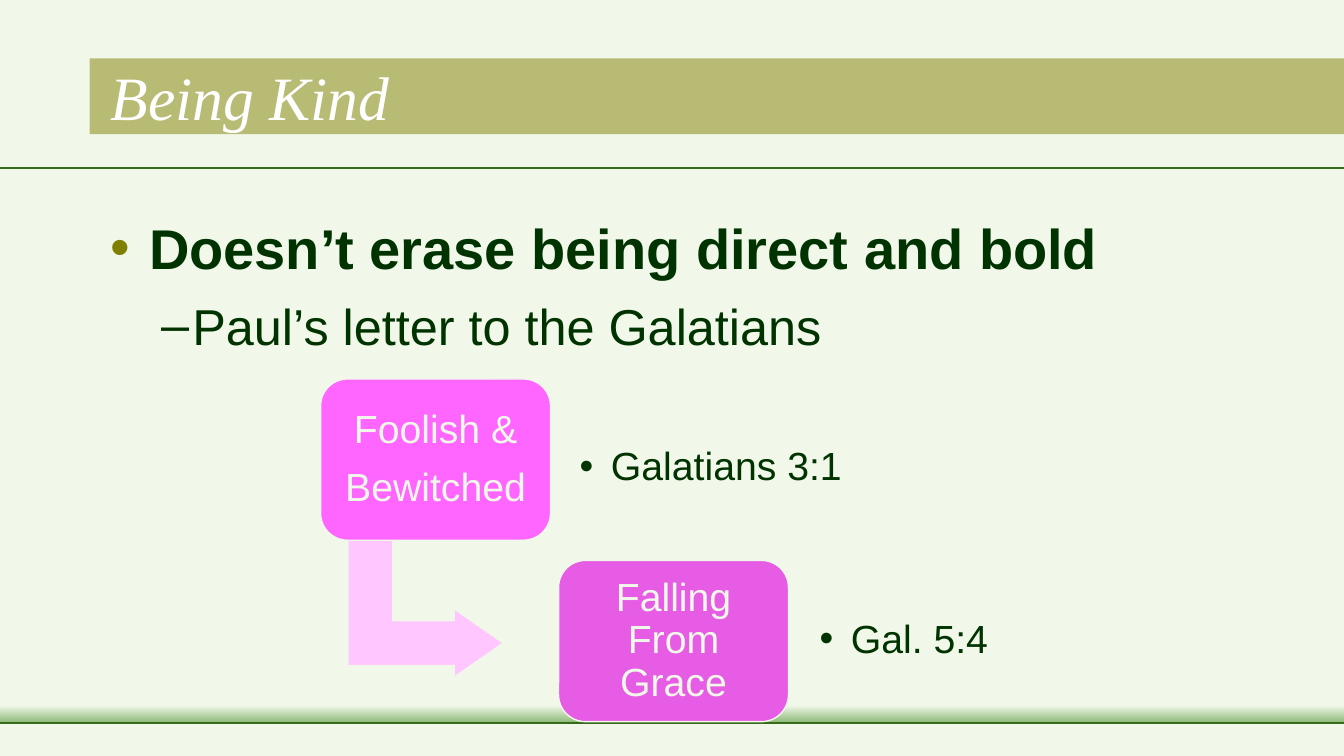
from lxml.etree import SubElement as Sub
from pptx import Presentation
from pptx.dml.color import RGBColor
from pptx.enum.shapes import MSO_CONNECTOR as Conn, MSO_SHAPE as Form
from pptx.enum.text import MSO_ANCHOR as Anchor, MSO_AUTO_SIZE as Auto, PP_ALIGN as Align
from pptx.oxml.ns import qn
from pptx.util import Inches, Pt

HUES = {
    "page": "F1F7E9", "rule": "366B1B", "glow": "8DBA76", "olive": "808000",
    "ink": "003300", "white": "FFFFFF", "pink": "FF66FF", "plum": "E65CE4",
    "arrow": "FFC6FF",
}
WIDE, HIGH = 13.33, 7.5

# name, box hue, lines in the box, verse, verse box, verse inset
STEPS = [
    ("pink", ["Foolish &", "Bewitched"], "Galatians 3:1", (5.63, 4, 3.62, 1.29), 0.12),
    ("plum", ["Falling From Grace"], "Gal. 5:4", (7.98, 5.71, 3, 1.29), 0.15),
]


def hue(name):
    return RGBColor.from_string(HUES[name])


def inch(box):
    return [Inches(n) for n in box]


def add_form(slide, form, box, fill=None, edge=None):
    shape = slide.shapes.add_shape(form, *inch(box))
    shape.shadow.inherit = False
    if fill:
        shape.fill.solid()
        shape.fill.fore_color.rgb = hue(fill)
    if edge:
        shape.line.color.rgb = hue(edge)
        shape.line.width = Pt(1)
    else:
        shape.line.fill.background()
    return shape


def add_rule(slide, top):
    rule = slide.shapes.add_connector(Conn.STRAIGHT, *inch((0, top, WIDE, top)))
    rule.line.color.rgb = hue("rule")
    rule.line.width = Pt(1.5)
    Sub(rule.element.spPr, qn("a:effectLst"))


def set_frame(frame, anchor, inset=None):
    frame.word_wrap = True
    frame.auto_size = Auto.NONE
    frame.vertical_anchor = anchor
    if inset is not None:
        frame.margin_left = frame.margin_right = Inches(inset)
        frame.margin_top = frame.margin_bottom = Inches(inset)


def add_run(para, text, size, color, face="Arial", bold=False, italic=False):
    run = para.add_run()
    run.text = text
    font = run.font
    font.name, font.size = face, Pt(size)
    font.bold, font.italic = bold, italic
    font.color.rgb = hue(color)


def set_mark(para, mark, left, hang, color="ink"):
    """Give the paragraph a bullet that hangs to the left of its text."""
    props = para._p.get_or_add_pPr()
    props.set("marL", str(Inches(left)))
    props.set("indent", str(-Inches(hang)))
    Sub(Sub(props, qn("a:buClr")), qn("a:srgbClr"), val=HUES[color])
    Sub(props, qn("a:buFont"), typeface="Arial")
    Sub(props, qn("a:buChar"), char=mark)


def add_decor(slide):
    slide.background.fill.solid()
    slide.background.fill.fore_color.rgb = hue("page")
    add_rule(slide, 1.67)
    glow = add_form(slide, Form.RECTANGLE, (0, 7, WIDE, 0.17))
    glow.fill.gradient()
    glow.fill.gradient_angle = 270
    for stop, name in zip(glow.fill.gradient_stops, ("page", "glow")):
        stop.color.rgb = hue(name)
    add_rule(slide, 7.17)
    band = add_form(slide, Form.RECTANGLE, (0.89, 0.58, WIDE - 0.89, 0.75), "olive")
    tint = band.element.spPr.find(qn("a:solidFill"))[0]
    Sub(tint, qn("a:alpha"), val="50000")


def set_title(slide, box, text):
    title = slide.shapes.title
    title.left, title.top, title.width, title.height = inch(box)
    set_frame(title.text_frame, Anchor.MIDDLE)
    para = title.text_frame.paragraphs[0]
    para.alignment = Align.LEFT
    add_run(para, text, 44, "white", "Times New Roman", italic=True)
    tree = title.element.getparent()
    tree.append(title.element)  # in front of the band


def add_body(slide, box):
    frame = slide.shapes.add_textbox(*inch(box)).text_frame
    set_frame(frame, Anchor.TOP)
    para = frame.paragraphs[0]
    set_mark(para, "•", 0.38, 0.38, "olive")
    add_run(para, "Doesn’t erase being direct and bold", 40, "ink", bold=True)
    para = frame.add_paragraph()
    para.level = 1
    para.space_before = Pt(10)
    set_mark(para, "–", 0.81, 0.31)
    add_run(para, "Paul’s letter to the Galatians", 36, "ink")


def add_step(slide, box, fill, lines):
    shape = add_form(slide, Form.ROUNDED_RECTANGLE, box, fill, "page")
    shape.adjustments[0] = 0.167
    frame = shape.text_frame
    set_frame(frame, Anchor.MIDDLE, 0.12)
    for i, line in enumerate(lines):
        para = frame.add_paragraph() if i else frame.paragraphs[0]
        para.alignment = Align.CENTER
        para.line_spacing = 0.9
        if i < len(lines) - 1:
            para.space_after = Pt(11)
        add_run(para, line, 28, "page")


def add_verse(slide, box, text, inset):
    frame = slide.shapes.add_textbox(*inch(box)).text_frame
    set_frame(frame, Anchor.MIDDLE, inset)
    para = frame.paragraphs[0]
    para.level = 1
    para.line_spacing = 0.9
    set_mark(para, "•", 0.31, 0.31)
    add_run(para, text, 28, "ink")


def add_flow(slide, left, top):
    """Place the two steps stair-wise, with a bent arrow between them."""
    arrow = add_form(slide, Form.BENT_UP_ARROW,
                     (left + 0.36, top + 1.51, 1.36, 1.54), "arrow", "page")
    arrow.rotation = 90
    for i, part in enumerate((0.328, 0.25, 0.358)):
        arrow.adjustments[i] = part
    for i, (fill, lines, verse, area, inset) in enumerate(STEPS):
        add_step(slide, (left + 2.36 * i, top + 1.8 * i, 2.28, 1.6), fill, lines)
        add_verse(slide, area, verse, inset)


def main():
    deck = Presentation()
    deck.slide_width, deck.slide_height = Inches(WIDE), Inches(HIGH)
    slide = deck.slides.add_slide(deck.slide_layouts[5])
    add_decor(slide)
    set_title(slide, (1, 0.33, 11.33, 1.25), "Being Kind")
    add_body(slide, (1, 2.07, 11.33, 2.33))
    add_flow(slide, 3.18, 3.76)
    deck.save("out.pptx")


if __name__ == "__main__":
    main()
